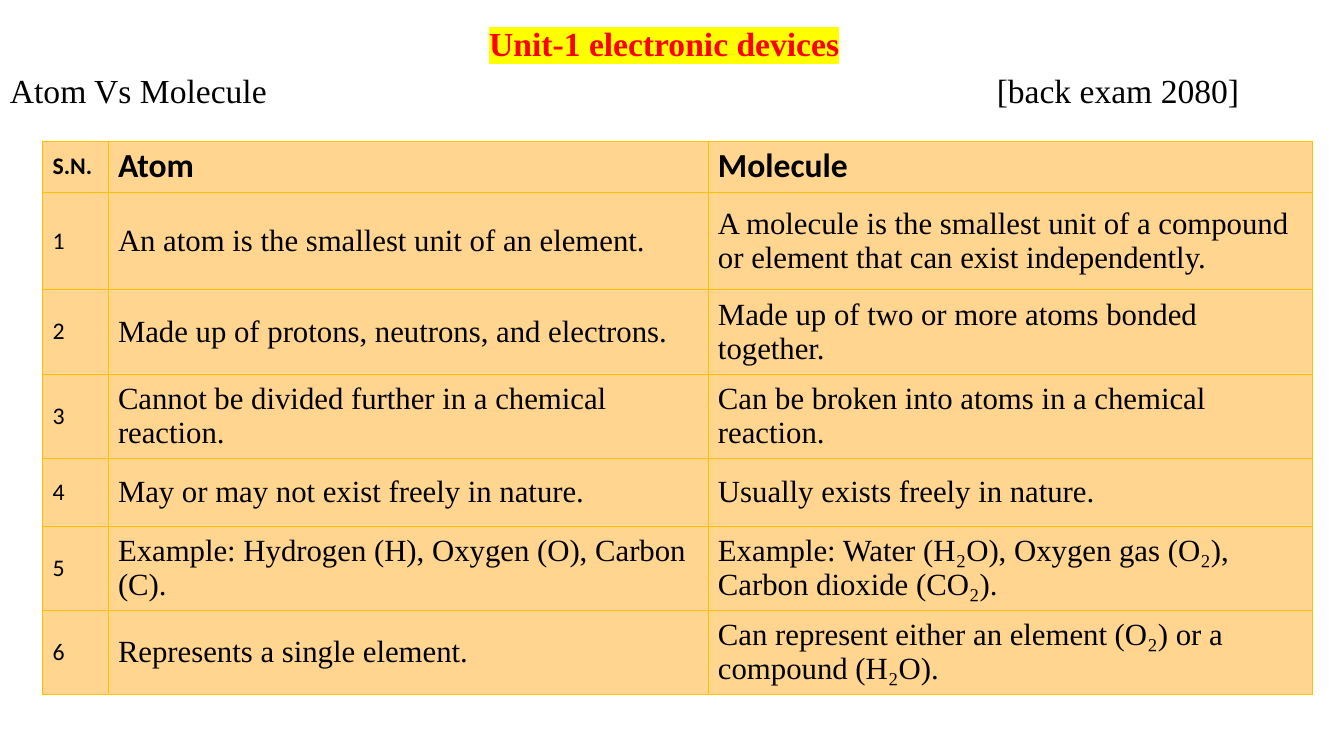
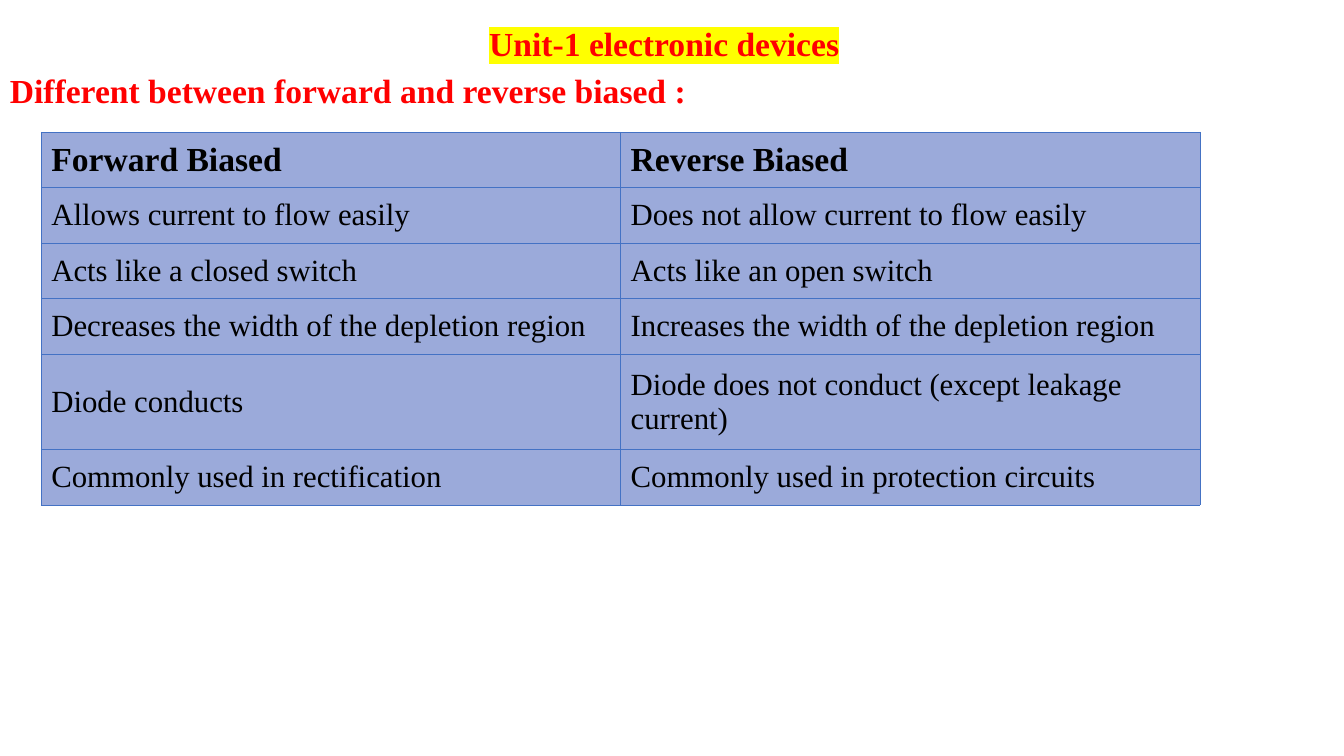
"""Build two comparison-table slides for the unit on electronic devices."""
from dataclasses import dataclass

from lxml import etree
from pptx import Presentation
from pptx.dml.color import RGBColor
from pptx.enum.text import MSO_ANCHOR, PP_ALIGN
from pptx.oxml.ns import qn
from pptx.util import Cm, Pt

CENTER, LEFT = PP_ALIGN.CENTER, PP_ALIGN.LEFT
MIDDLE = MSO_ANCHOR.MIDDLE


@dataclass(frozen=True)
class Theme:
    serif: str = "Times New Roman"
    sans: str = "Calibri"
    ink: str = "000000"
    accent: str = "FF0000"
    highlight: str = "FFFF00"
    gold: str = "FFD58F"
    gold_line: str = "FFC000"
    blue: str = "9BAADA"
    blue_line: str = "4472C4"
    heading: int = 24
    body: int = 22
    number: int = 17
    border: float = 0.5


T = Theme()


def add_run(p, text, size, font=T.serif, color=T.ink, bold=False):
    r = p.add_run()
    r.text = text
    r.font.size = Pt(size)
    r.font.name = font
    r.font.bold = bold
    r.font.color.rgb = RGBColor.from_string(color)
    return r


def style_cell(cell, fill, line):
    cell.vertical_anchor = MIDDLE
    tc_pr = cell._tc.get_or_add_tcPr()
    for side in ("a:lnL", "a:lnR", "a:lnT", "a:lnB"):
        ln = etree.SubElement(tc_pr, qn(side), w=str(Pt(T.border)))
        solid = etree.SubElement(ln, qn("a:solidFill"))
        etree.SubElement(solid, qn("a:srgbClr"), val=line)
    cell.fill.solid()
    cell.fill.fore_color.rgb = RGBColor.from_string(fill)


slides = [
    dict(
        subtitle="Atom Vs Molecule\t[back exam 2080]", color=T.ink, bold=False,
        fill=T.gold, line=T.gold_line, header_font=T.sans,
        left=1.07, top=3.55, cols=[1.65, 15.12, 15.23],
        heights=[1.29, 2.46, 2.12, 2.12, 1.72, 2.12, 2.12],
        rows=[
            ("S.N.", "Atom", "Molecule"),
            ("1", "An atom is the smallest unit of an element.",
             "A molecule is the smallest unit of a compound or element that can exist independently."),
            ("2", "Made up of protons, neutrons, and electrons.",
             "Made up of two or more atoms bonded together."),
            ("3", "Cannot be divided further in a chemical reaction.",
             "Can be broken into atoms in a chemical reaction."),
            ("4", "May or may not exist freely in nature.",
             "Usually exists freely in nature."),
            ("5", "Example: Hydrogen (H), Oxygen (O), Carbon (C).",
             "Example: Water (H₂O), Oxygen gas (O₂), Carbon dioxide (CO₂)."),
            ("6", "Represents a single element.",
             "Can represent either an element (O₂) or a compound (H₂O)."),
        ],
    ),
    dict(
        subtitle="Different between forward and reverse biased :", color=T.accent, bold=True,
        fill=T.blue, line=T.blue_line, header_font=T.serif,
        left=1.04, top=3.33, cols=[14.6, 14.6],
        heights=[1.4, 1.4, 1.4, 1.4, 2.4, 1.4],
        rows=[
            ("Forward Biased", "Reverse Biased"),
            ("Allows current to flow easily", "Does not allow current to flow easily"),
            ("Acts like a closed switch", "Acts like an open switch"),
            ("Decreases the width of the depletion region",
             "Increases the width of the depletion region"),
            ("Diode conducts", "Diode does not conduct (except leakage current)"),
            ("Commonly used in rectification", "Commonly used in protection circuits"),
        ],
    ),
]

prs = Presentation()
prs.slide_width, prs.slide_height = Cm(33.87), Cm(19.05)

for data in slides:
    s = prs.slides.add_slide(prs.slide_layouts[6])

    tf = s.shapes.add_textbox(Cm(0), Cm(0.46), Cm(33.48), Cm(2.36)).text_frame
    tf.word_wrap = True
    p = tf.paragraphs[0]
    p.alignment = CENTER
    r = add_run(p, "Unit-1 electronic devices", T.heading, color=T.accent, bold=True)
    highlight = etree.Element(qn("a:highlight"))
    etree.SubElement(highlight, qn("a:srgbClr"), val=T.highlight)
    r.font.fill._xPr.find(qn("a:solidFill")).addnext(highlight)

    p = tf.add_paragraph()
    p.alignment = LEFT
    p.line_spacing = 1.15
    tabs = etree.SubElement(p._p.get_or_add_pPr(), qn("a:tabLst"))
    etree.SubElement(tabs, qn("a:tab"), pos=str(Cm(24.87)), algn="l")
    add_run(p, data["subtitle"], T.heading, color=data["color"], bold=data["bold"])

    rows, cols, heights = data["rows"], data["cols"], data["heights"]
    table = s.shapes.add_table(len(rows), len(cols), Cm(data["left"]), Cm(data["top"]),
                               Cm(sum(cols)), Cm(sum(heights))).table
    for column, width in zip(table.columns, cols):
        column.width = Cm(width)
    for i, (row, height, texts) in enumerate(zip(table.rows, heights, rows)):
        row.height = Cm(height)
        for j, (cell, text) in enumerate(zip(row.cells, texts)):
            style_cell(cell, data["fill"], data["line"])
            header = i == 0
            numbered = len(cols) == 3 and j == 0
            size = T.number if numbered else T.heading if header else T.body
            font = T.sans if numbered else data["header_font"] if header else T.serif
            add_run(cell.text_frame.paragraphs[0], text, size, font, bold=header)

prs.save("out.pptx")
